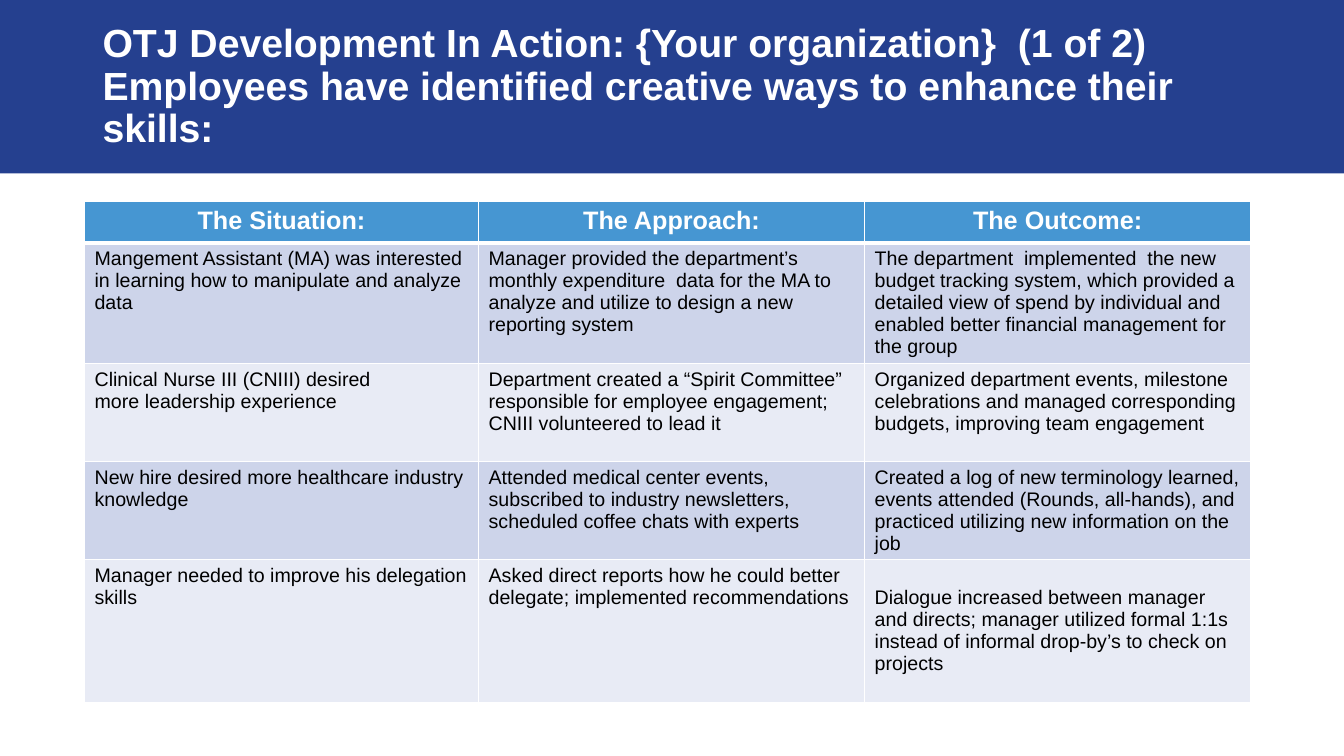
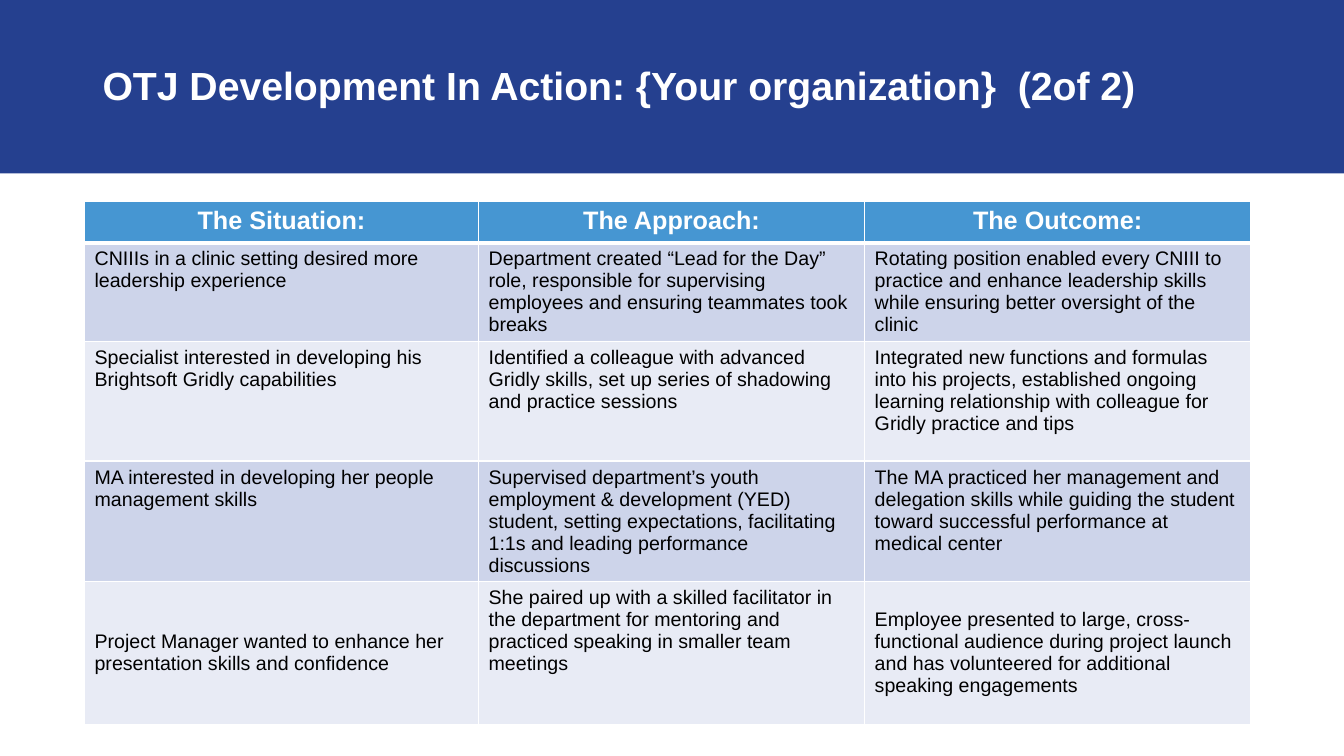
from lxml import etree
from pptx import Presentation
from pptx.dml.color import RGBColor
from pptx.enum import shapes, text
from pptx.oxml import ns
from pptx.util import Cm, Pt

NAVY = RGBColor(0x25, 0x40, 0x8F)
BLUE = RGBColor(0x46, 0x96, 0xD2)
LAVENDER = RGBColor(0xCD, 0xD4, 0xEA)
PALE = RGBColor(0xE8, 0xEB, 0xF5)
WHITE = RGBColor(0xFF, 0xFF, 0xFF)
BLACK = RGBColor(0, 0, 0)

FONT = "Arial"
HEADINGS = ("The Situation:", "The Approach:", "The Outcome:")
COLUMN_WIDTHS = (9.93, 9.73, 9.73)
HEADER_HEIGHT = 1.04
CELL_MARGIN = 0.13
LINE_HEIGHT = 0.56
TITLE_ONLY = 5


class Deck:
    def __init__(self):
        self.presentation = Presentation()
        self.presentation.slide_width = Cm(33.87)
        self.presentation.slide_height = Cm(19.05)
        self.slide = None

    def add_slide(self, title_lines):
        layout = self.presentation.slide_layouts[TITLE_ONLY]
        self.slide = self.presentation.slides.add_slide(layout)
        self.title(title_lines)
        self.band()

    def title(self, lines):
        title = self.slide.shapes.title
        title.left, title.top = Cm(2.33), Cm(0.36)
        title.width, title.height = Cm(29.21), Cm(3.68)
        frame = title.text_frame
        frame.word_wrap = True
        frame.auto_size = text.MSO_AUTO_SIZE.NONE
        frame.vertical_anchor = text.MSO_ANCHOR.MIDDLE
        paragraph = frame.paragraphs[0]
        paragraph.alignment = text.PP_ALIGN.LEFT
        paragraph.line_spacing = 0.9
        for index, line in enumerate(lines):
            if index:
                paragraph.add_line_break()
            self.run(paragraph, line, 28, WHITE, bold=True)

    def band(self):
        """Draw the title band and place it behind the title."""
        band = self.slide.shapes.add_shape(
            shapes.MSO_SHAPE.RECTANGLE, 0, 0,
            self.presentation.slide_width, Cm(4.37))
        band.shadow.inherit = False
        band.fill.solid()
        band.fill.fore_color.rgb = NAVY
        band.line.fill.background()
        self.slide.shapes.title.element.addprevious(band.element)

    def run(self, paragraph, content, size, color, bold=False):
        run = paragraph.add_run()
        run.text = content
        run.font.name = FONT
        run.font.size = Pt(size)
        run.font.bold = bold
        run.font.color.rgb = color

    def borders(self, cell, top, bottom):
        """Give the cell white borders; top and bottom are widths in points."""
        properties = cell._tc.get_or_add_tcPr()
        for side, width in (("L", 1), ("R", 1), ("T", top), ("B", bottom)):
            line = etree.SubElement(properties, ns.qn(f"a:ln{side}"), w=str(Pt(width)))
            fill = etree.SubElement(line, ns.qn("a:solidFill"))
            etree.SubElement(fill, ns.qn("a:srgbClr"), val=str(WHITE))

    def cell(self, cell, content, row, lines_above):
        is_header = row == 0
        self.borders(cell, top=3 if row == 1 else 1, bottom=3 if is_header else 1)
        cell.fill.solid()
        cell.fill.fore_color.rgb = BLUE if is_header else LAVENDER if row % 2 else PALE
        cell.margin_top = Cm(CELL_MARGIN + lines_above * LINE_HEIGHT)
        frame = cell.text_frame
        for index, line in enumerate(content.split("\n")):
            paragraph = frame.add_paragraph() if index else frame.paragraphs[0]
            if is_header:
                paragraph.alignment = text.PP_ALIGN.CENTER
                self.run(paragraph, line, 18, WHITE, bold=True)
            else:
                self.run(paragraph, line, 14, BLACK)

    def table(self, rows, row_heights, lowered):
        """Add the table; lowered maps (row, column) to lines left free above."""
        heights = (HEADER_HEIGHT, *row_heights)
        table = self.slide.shapes.add_table(
            len(heights), len(HEADINGS), Cm(2.13), Cm(5.08),
            Cm(sum(COLUMN_WIDTHS)), Cm(sum(heights))).table
        for column, width in zip(table.columns, COLUMN_WIDTHS):
            column.width = Cm(width)
        for row, (height, contents) in enumerate(zip(heights, (HEADINGS, *rows))):
            table.rows[row].height = Cm(height)
            for column, content in enumerate(contents):
                self.cell(table.cell(row, column), content, row,
                          lowered.get((row, column), 0))


FIRST_EXAMPLES = (
    ("Mangement Assistant (MA) was interested in learning how to manipulate and analyze data",
     "Manager provided the department’s monthly expenditure  data for the MA to analyze "
     "and utilize to design a new reporting system",
     "The department  implemented  the new budget tracking system, which provided a detailed "
     "view of spend by individual and enabled better financial management for the group"),
    ("Clinical Nurse III (CNIII) desired\nmore leadership experience",
     "Department created a “Spirit Committee” responsible for employee engagement; "
     "CNIII volunteered to lead it",
     "Organized department events, milestone celebrations and managed corresponding "
     "budgets, improving team engagement"),
    ("New hire desired more healthcare industry knowledge",
     "Attended medical center events, subscribed to industry newsletters, "
     "scheduled coffee chats with experts",
     "Created a log of new terminology learned, events attended (Rounds, all-hands), "
     "and practiced utilizing new information on the job"),
    ("Manager needed to improve his delegation skills",
     "Asked direct reports how he could better delegate; implemented recommendations",
     "Dialogue increased between manager and directs; manager utilized formal 1:1s "
     "instead of informal drop-by’s to check on projects"),
)

SECOND_EXAMPLES = (
    ("CNIIIs in a clinic setting desired more leadership experience",
     "Department created “Lead for the Day” role, responsible for supervising employees "
     "and ensuring teammates took breaks",
     "Rotating position enabled every CNIII to practice and enhance leadership skills "
     "while ensuring better oversight of the clinic"),
    ("Specialist interested in developing his Brightsoft Gridly capabilities",
     "Identified a colleague with advanced Gridly skills, set up series of shadowing "
     "and practice sessions",
     "Integrated new functions and formulas into his projects, established ongoing "
     "learning relationship with colleague for Gridly practice and tips"),
    ("MA interested in developing her people management skills",
     "Supervised department’s youth employment & development (YED) student, setting "
     "expectations, facilitating 1:1s and leading performance discussions",
     "The MA practiced her management and delegation skills while guiding the student "
     "toward successful performance at medical center"),
    ("Project Manager wanted to enhance her presentation skills and confidence",
     "She paired up with a skilled facilitator in the department for mentoring and "
     "practiced speaking in smaller team meetings",
     "Employee presented to large, cross- functional audience during project launch "
     "and has volunteered for additional speaking engagements"),
)


def main():
    deck = Deck()
    deck.add_slide((
        "OTJ Development In Action: {Your organization}  (1 of 2)",
        "Employees have identified creative ways to enhance their skills:"))
    deck.table(FIRST_EXAMPLES, (3.02, 2.47, 2.47, 3.6), {(4, 2): 1})

    deck.add_slide(("OTJ Development In Action: {Your organization}  (2of 2)",))
    deck.table(SECOND_EXAMPLES, (2.47, 3.02, 3.02, 3.6), {(4, 0): 2, (4, 2): 1})

    deck.presentation.save("out.pptx")


if __name__ == "__main__":
    main()
